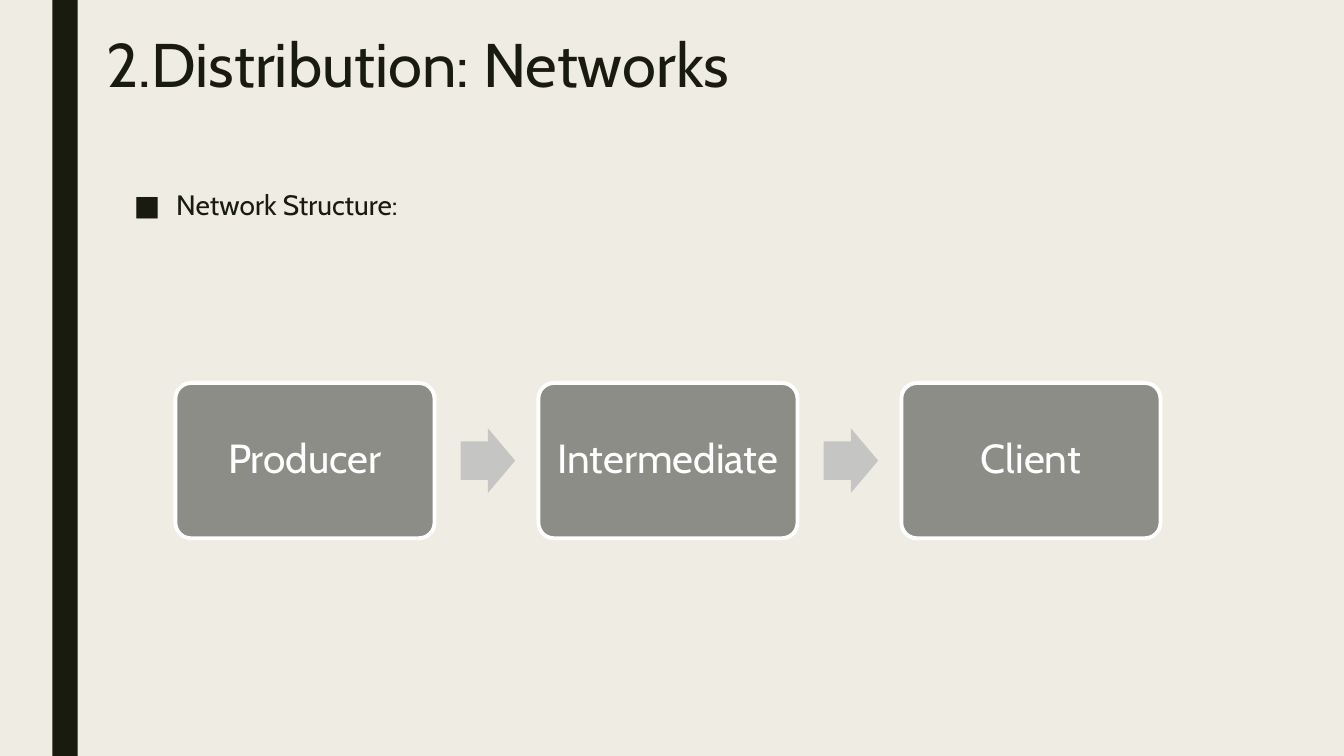
from dataclasses import dataclass

from lxml.etree import SubElement
from pptx import Presentation
from pptx.dml.color import RGBColor
from pptx.enum.shapes import MSO_SHAPE
from pptx.enum.text import MSO_ANCHOR, PP_ALIGN
from pptx.oxml.ns import qn
from pptx.util import Inches, Pt


@dataclass(frozen=True)
class Theme:
    font: str = "Cabin"
    background: RGBColor = RGBColor(0xEF, 0xED, 0xE3)
    ink: RGBColor = RGBColor(0x19, 0x1B, 0x0E)
    stage: RGBColor = RGBColor(0x8C, 0x8D, 0x86)
    arrow: RGBColor = RGBColor(0xC5, 0xC5, 0xC3)
    white: RGBColor = RGBColor(0xFF, 0xFF, 0xFF)
    title_size: int = 44
    body_size: int = 20
    stage_size: int = 29


THEME = Theme()

STAGES = ["Producer", "Intermediate", "Client"]
FLOW_LEFT, FLOW_MIDDLE = 1.74, 4.57
STAGE_WIDTH, STAGE_HEIGHT = 2.57, 1.54
STAGE_PITCH = 3.6
ARROW_WIDTH, ARROW_HEIGHT = 0.54, 0.64
ARROW_OFFSET = 2.83


def add_run(paragraph, text, size, color):
    run = paragraph.add_run()
    run.text = text
    run.font.name = THEME.font
    run.font.size = Pt(size)
    run.font.color.rgb = color


def add_text(slide, left, top, width, height, text, size, line_spacing):
    box = slide.shapes.add_textbox(Inches(left), Inches(top), Inches(width), Inches(height))
    box.text_frame.word_wrap = True
    paragraph = box.text_frame.paragraphs[0]
    paragraph.line_spacing = line_spacing
    add_run(paragraph, text, size, THEME.ink)
    return paragraph


def add_square_bullet(paragraph):
    properties = paragraph._p.get_or_add_pPr()
    properties.set("marL", str(Inches(0.42)))
    properties.set("indent", str(Inches(-0.42)))
    SubElement(properties, qn("a:buFont"), typeface=THEME.font)
    SubElement(properties, qn("a:buChar"), char="■")


def add_filled_shape(slide, preset, left, top, width, height, color):
    shape = slide.shapes.add_shape(
        preset, Inches(left), Inches(top), Inches(width), Inches(height))
    shape.shadow.inherit = False
    shape.fill.solid()
    shape.fill.fore_color.rgb = color
    shape.line.fill.background()
    return shape


def add_stage(slide, left, label):
    stage = add_filled_shape(slide, MSO_SHAPE.ROUNDED_RECTANGLE, left,
                             FLOW_MIDDLE - STAGE_HEIGHT / 2,
                             STAGE_WIDTH, STAGE_HEIGHT, THEME.stage)
    stage.adjustments[0] = 0.1
    stage.line.color.rgb = THEME.white
    stage.line.width = Pt(2.75)
    frame = stage.text_frame
    frame.word_wrap = True
    frame.vertical_anchor = MSO_ANCHOR.MIDDLE
    frame.margin_left = frame.margin_right = Inches(0.12)
    frame.margin_top = frame.margin_bottom = Inches(0.12)
    paragraph = frame.paragraphs[0]
    paragraph.alignment = PP_ALIGN.CENTER
    paragraph.line_spacing = 0.9
    add_run(paragraph, label, THEME.stage_size, THEME.white)


def add_flow_arrow(slide, left):
    arrow = add_filled_shape(slide, MSO_SHAPE.RIGHT_ARROW, left,
                             FLOW_MIDDLE - ARROW_HEIGHT / 2,
                             ARROW_WIDTH, ARROW_HEIGHT, THEME.arrow)
    arrow.adjustments[0] = 0.6
    arrow.adjustments[1] = 0.5


def add_network_flow(slide):
    for index, label in enumerate(STAGES):
        left = FLOW_LEFT + index * STAGE_PITCH
        add_stage(slide, left, label)
        if index < len(STAGES) - 1:
            add_flow_arrow(slide, left + ARROW_OFFSET)


def main():
    presentation = Presentation()
    presentation.slide_width = Inches(13.33)
    presentation.slide_height = Inches(7.5)
    slide = presentation.slides.add_slide(presentation.slide_layouts[6])
    slide.background.fill.solid()
    slide.background.fill.fore_color.rgb = THEME.background

    add_filled_shape(slide, MSO_SHAPE.RECTANGLE, 0.52, 0, 0.25, 7.5, THEME.ink)
    add_text(slide, 0.96, 0.3, 11.57, 0.89, "2.Distribution: Networks",
             THEME.title_size, 0.89)
    topic = add_text(slide, 1.23, 1.84, 11.3, 4.79, "Network Structure:",
                     THEME.body_size, 0.94)
    add_square_bullet(topic)
    add_network_flow(slide)
    presentation.save("out.pptx")


if __name__ == "__main__":
    main()
